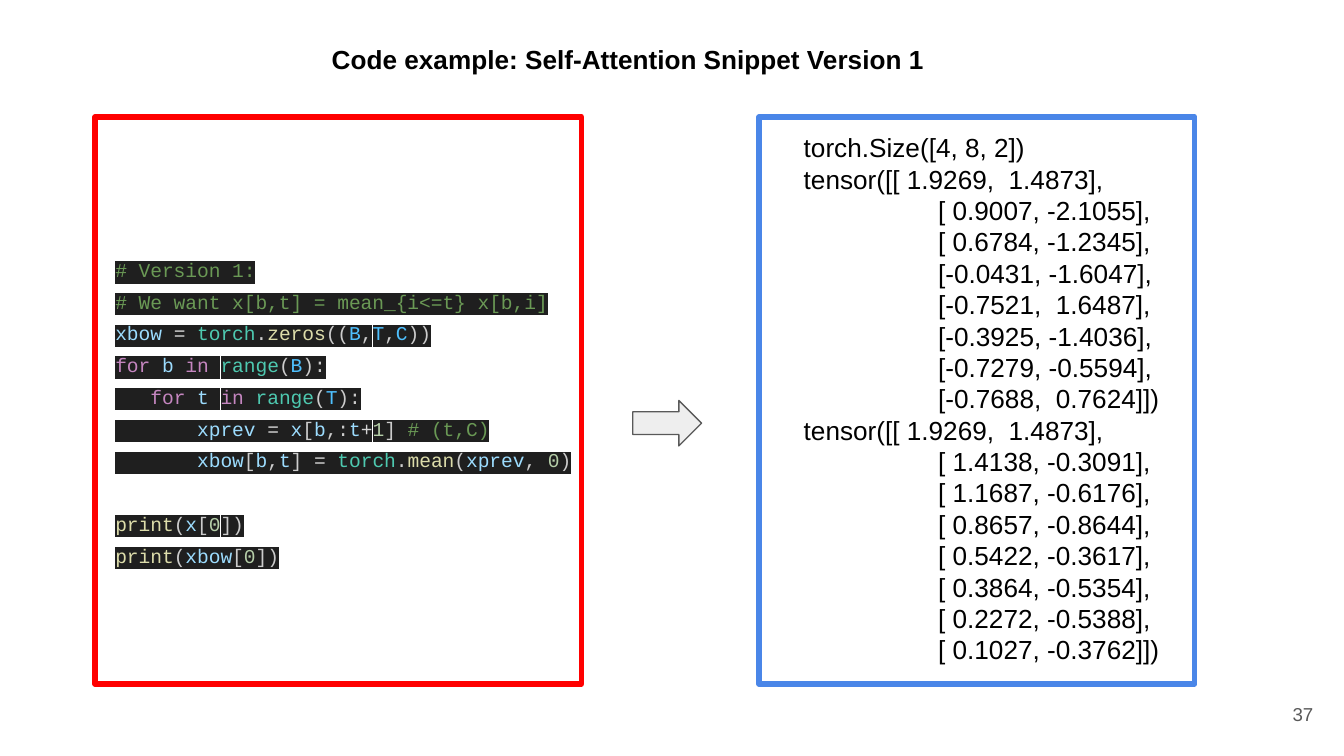
from itertools import groupby

from lxml import etree
from pptx import Presentation
from pptx import util as u
from pptx.dml.color import RGBColor
from pptx.enum import shapes, text
from pptx.oxml.ns import qn

COLORS = {
    "black": "000000", "page": "595959", "code_frame": "FF0000",
    "output_frame": "4A86E8", "arrow": "EEEEEE", "highlight": "1F1F1F",
    "comment": "6A9955", "variable": "9CDCFE", "punctuation": "CCCCCC",
    "operator": "D4D4D4", "type": "4EC9B0", "function": "DCDCAA",
    "constant": "4FC1FF", "keyword": "C586C0", "number": "B5CEA8",
}

WORD_KINDS = {
    "for": "keyword", "in": "keyword", "torch": "type", "range": "type",
    "zeros": "function", "mean": "function", "print": "function",
    "B": "constant", "T": "constant", "C": "constant",
}

LOOP_CODE = """# Version 1:
# We want x[b,t] = mean_{i<=t} x[b,i]
xbow = torch.zeros((B,T,C))
for b in range(B):
   for t in range(T):
       xprev = x[b,:t+1] # (t,C)
       xbow[b,t] = torch.mean(xprev, 0)"""

PRINT_CODE = """print(x[0])
print(xbow[0])"""

OUTPUT = """torch.Size([4, 8, 2])
tensor([[ 1.9269,  1.4873],
[ 0.9007, -2.1055],
[ 0.6784, -1.2345],
[-0.0431, -1.6047],
[-0.7521,  1.6487],
[-0.3925, -1.4036],
[-0.7279, -0.5594],
[-0.7688,  0.7624]])
tensor([[ 1.9269,  1.4873],
[ 1.4138, -0.3091],
[ 1.1687, -0.6176],
[ 0.8657, -0.8644],
[ 0.5422, -0.3617],
[ 0.3864, -0.5354],
[ 0.2272, -0.5388],
[ 0.1027, -0.3762]])"""


def char_class(char):
    if char.isalnum():
        return "word"
    return "operator" if char in "=+" else "punctuation"


def tokens(line):
    code, mark, comment = line.partition("#")
    for kind, chars in groupby(code, char_class):
        token = "".join(chars)
        if kind == "word":
            kind = "number" if token.isdigit() else WORD_KINDS.get(token, "variable")
        yield token, kind
    if mark:
        yield mark + comment, "comment"


class SlideBuilder:
    body_font = "Arial"
    code_font = "Courier New"
    code_size = u.Pt(10.5)
    code_pitch = u.Pt(17)
    row_indent = u.Cm(2.54)

    def __init__(self, slide):
        self.slide = slide

    def color(self, name):
        return RGBColor.from_string(COLORS[name])

    def group(self):
        return self.slide.shapes.add_group_shape().shapes

    def frame(self, box, parent, top=0.25):
        frame = parent.add_textbox(*map(u.Cm, box)).text_frame
        frame.word_wrap = True
        frame.margin_left = frame.margin_right = frame.margin_bottom = u.Cm(0.25)
        frame.margin_top = u.Cm(top)
        return frame

    def paragraphs(self, frame, lines):
        for number, line in enumerate(lines):
            yield line, frame.add_paragraph() if number else frame.paragraphs[0]

    def plain(self, box, content, size, color="black", bold=False, align=None, parent=None):
        frame = self.frame(box, parent or self.slide.shapes)
        for line, paragraph in self.paragraphs(frame, content.splitlines()):
            paragraph.text = line
            paragraph.alignment = align
            paragraph.font.name = self.body_font
            paragraph.font.size = u.Pt(size)
            paragraph.font.bold = bold
            paragraph.font.color.rgb = self.color(color)
            if line.startswith("["):
                paragraph._p.get_or_add_pPr().set("marL", str(self.row_indent))
        return frame

    def code(self, box, blocks, parent):
        frame = self.frame(box, parent, top=1.93)
        starts = {block.splitlines()[0] for block in blocks[1:]}
        for line, paragraph in self.paragraphs(frame, "\n".join(blocks).splitlines()):
            paragraph.line_spacing = self.code_pitch
            if line in starts:
                paragraph.space_before = self.code_pitch
            paragraph.font.name = self.code_font
            paragraph.font.size = self.code_size
            for token, kind in tokens(line):
                run = paragraph.add_run()
                run.text = token
                run.font.color.rgb = self.color(kind)
                highlight = etree.SubElement(run._r.get_or_add_rPr(), qn("a:highlight"))
                etree.SubElement(highlight, qn("a:srgbClr"), val=COLORS["highlight"])

    def shape(self, kind, box, line, width, fill=None, parent=None):
        shape = (parent or self.slide.shapes).add_shape(kind, *map(u.Cm, box))
        shape.shadow.inherit = False
        shape.line.color.rgb = self.color(line)
        shape.line.width = u.Pt(width)
        if fill:
            shape.fill.solid()
            shape.fill.fore_color.rgb = self.color(fill)
        else:
            shape.fill.background()


def main():
    deck = Presentation()
    deck.slide_width, deck.slide_height = u.Cm(25.4), u.Cm(14.29)
    builder = SlideBuilder(deck.slides.add_slide(deck.slide_layouts[6]))

    builder.plain((6.02, 0.58, 12.22, 1.17),
                  "Code example: Self-Attention Snippet Version 1", 14, bold=True)
    page = builder.plain((23.55, 12.95, 1.52, 1.09), "37", 10, "page",
                         align=text.PP_ALIGN.RIGHT)
    page.vertical_anchor = text.MSO_ANCHOR.MIDDLE

    rectangle = shapes.MSO_SHAPE.RECTANGLE
    snippet = builder.group()
    builder.code((1.93, 2.79, 9.6, 9.58), [LOOP_CODE, PRINT_CODE], snippet)
    builder.shape(rectangle, (1.8, 2.21, 9.19, 10.72), "code_frame", 3, parent=snippet)

    result = builder.group()
    builder.plain((14.94, 2.24, 8.94, 10.69), OUTPUT, 14, parent=result)
    builder.shape(rectangle, (14.35, 2.21, 8.23, 10.72), "output_frame", 3, parent=result)

    builder.shape(shapes.MSO_SHAPE.RIGHT_ARROW, (11.96, 7.57, 1.3, 0.86),
                  "page", 0.75, fill="arrow")
    deck.save("out.pptx")


if __name__ == "__main__":
    main()
